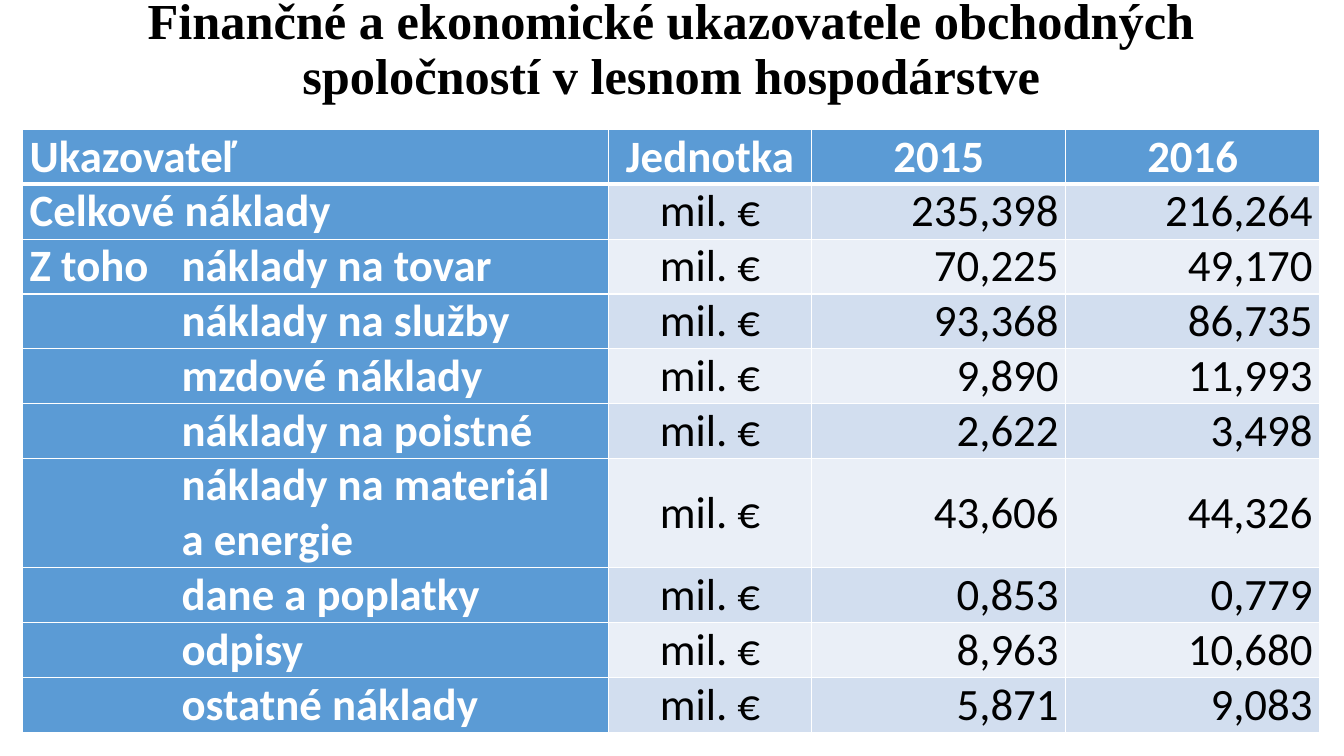
import pptx
import pptx.util
import pptx.dml.color
import pptx.enum.text
import pptx.oxml.ns
from lxml import etree

Pt = pptx.util.Pt
RGBColor = pptx.dml.color.RGBColor
ALIGN = pptx.enum.text.PP_ALIGN
ANCHOR = pptx.enum.text.MSO_ANCHOR
qn = pptx.oxml.ns.qn

WHITE = RGBColor(0xFF, 0xFF, 0xFF)
BLACK = RGBColor(0, 0, 0)
BLUE = RGBColor(0x5B, 0x9B, 0xD5)
BANDS = (RGBColor(0xD2, 0xDE, 0xEF), RGBColor(0xEA, 0xEF, 0xF7))

TITLE = "Finančné a ekonomické ukazovatele obchodných spoločností v lesnom hospodárstve"
HEADER = ("Ukazovateľ", "Jednotka", "2015", "2016")
UNIT = "mil. €"
# Label lines, whether the label is indented, value for 2015, value for 2016
COSTS = [
    (["Celkové náklady"], False, "235,398", "216,264"),
    (["Z toho\tnáklady na tovar"], False, "70,225", "49,170"),
    (["náklady na služby"], True, "93,368", "86,735"),
    (["mzdové náklady"], True, "9,890", "11,993"),
    (["náklady na poistné"], True, "2,622", "3,498"),
    (["náklady na materiál", "a energie"], True, "43,606", "44,326"),
    (["dane a poplatky"], True, "0,853", "0,779"),
    (["odpisy"], True, "8,963", "10,680"),
    (["ostatné náklady"], True, "5,871", "9,083"),
]
COL_WIDTHS = (418.3, 145.4, 181.4, 181.4)
LINE_HEIGHT = 39
LABEL_INDENT = Pt(108.5)


class SlideBuilder:
    title_font, title_size = "Times New Roman", 36
    table_font, table_size = "Calibri", 32

    def __init__(self, prs):
        self.s = prs.slides.add_slide(prs.slide_layouts[5])

    def run(self, p, text, font, size, color, bold):
        r = p.add_run()
        r.text = text
        r.font.name, r.font.size, r.font.bold = font, Pt(size), bold
        r.font.color.rgb = color

    def title(self, text, x, y, w, h):
        sp = self.s.shapes.title
        sp.left, sp.top, sp.width, sp.height = Pt(x), Pt(y), Pt(w), Pt(h)
        tf = sp.text_frame
        tf.word_wrap = True
        tf.auto_size = pptx.enum.text.MSO_AUTO_SIZE.NONE
        tf.vertical_anchor = ANCHOR.MIDDLE
        p = tf.paragraphs[0]
        p.alignment, p.line_spacing = ALIGN.CENTER, 0.9
        self.run(p, text, self.title_font, self.title_size, BLACK, True)

    def table(self, x, y, widths, heights):
        frame = self.s.shapes.add_table(len(heights), len(widths), Pt(x), Pt(y),
                                        Pt(sum(widths)), Pt(sum(heights)))
        tbl = frame.table
        tbl.first_row = tbl.horz_banding = False
        for column, width in zip(tbl.columns, widths):
            column.width = Pt(width)
        for row, height in zip(tbl.rows, heights):
            row.height = Pt(height)
        return tbl

    def cell(self, cell, lines, fill, color, bold, align, anchor, top=1, bottom=1):
        cell.margin_left = cell.margin_right = Pt(5)
        cell.margin_top = cell.margin_bottom = 0
        cell.vertical_anchor = anchor
        self.borders(cell, {"lnL": 1, "lnR": 1, "lnT": top, "lnB": bottom})
        cell.fill.solid()
        cell.fill.fore_color.rgb = fill
        tf = cell.text_frame
        for i, line in enumerate(lines):
            p = tf.add_paragraph() if i else tf.paragraphs[0]
            p.alignment = align
            self.run(p, line, self.table_font, self.table_size, color, bold)

    def borders(self, cell, widths):
        tcPr = cell._tc.get_or_add_tcPr()
        for side, width in widths.items():
            ln = etree.SubElement(tcPr, qn("a:" + side), w=str(Pt(width)))
            solid = etree.SubElement(ln, qn("a:solidFill"))
            etree.SubElement(solid, qn("a:srgbClr"), val=str(WHITE))

    def indent(self, cell):
        for p in cell.text_frame.paragraphs:
            pPr = p._p.get_or_add_pPr()
            pPr.set("marL", str(LABEL_INDENT))
            pPr.set("indent", "0")

    def tab_stop(self, cell):
        pPr = cell.text_frame.paragraphs[0]._p.get_or_add_pPr()
        tabs = etree.SubElement(pPr, qn("a:tabLst"))
        etree.SubElement(tabs, qn("a:tab"), pos=str(LABEL_INDENT), algn="l")


def main():
    prs = pptx.Presentation()
    prs.slide_width, prs.slide_height = Pt(960), Pt(540)
    b = SlideBuilder(prs)
    b.title(TITLE, 65.5, 0, 828, 72.7)

    heights = [LINE_HEIGHT] + [LINE_HEIGHT * len(cost[0]) for cost in COSTS]
    tbl = b.table(16.2, 92.5, COL_WIDTHS, heights)
    for col, text in enumerate(HEADER):
        align = ALIGN.CENTER if col else ALIGN.JUSTIFY
        b.cell(tbl.cell(0, col), [text], BLUE, WHITE, True, align, ANCHOR.TOP, bottom=3)

    for row, (label, indented, *values) in enumerate(COSTS, 1):
        top = 3 if row == 1 else 1
        name = tbl.cell(row, 0)
        b.cell(name, label, BLUE, WHITE, True, ALIGN.JUSTIFY, ANCHOR.TOP, top)
        if indented:
            b.indent(name)
        elif "\t" in label[0]:
            b.tab_stop(name)
        band = BANDS[(row - 1) % 2]
        for col, text in enumerate([UNIT] + values, 1):
            align = ALIGN.CENTER if col == 1 else ALIGN.RIGHT
            b.cell(tbl.cell(row, col), [text], band, BLACK, False, align, ANCHOR.MIDDLE, top)

    prs.save("out.pptx")


if __name__ == "__main__":
    main()
